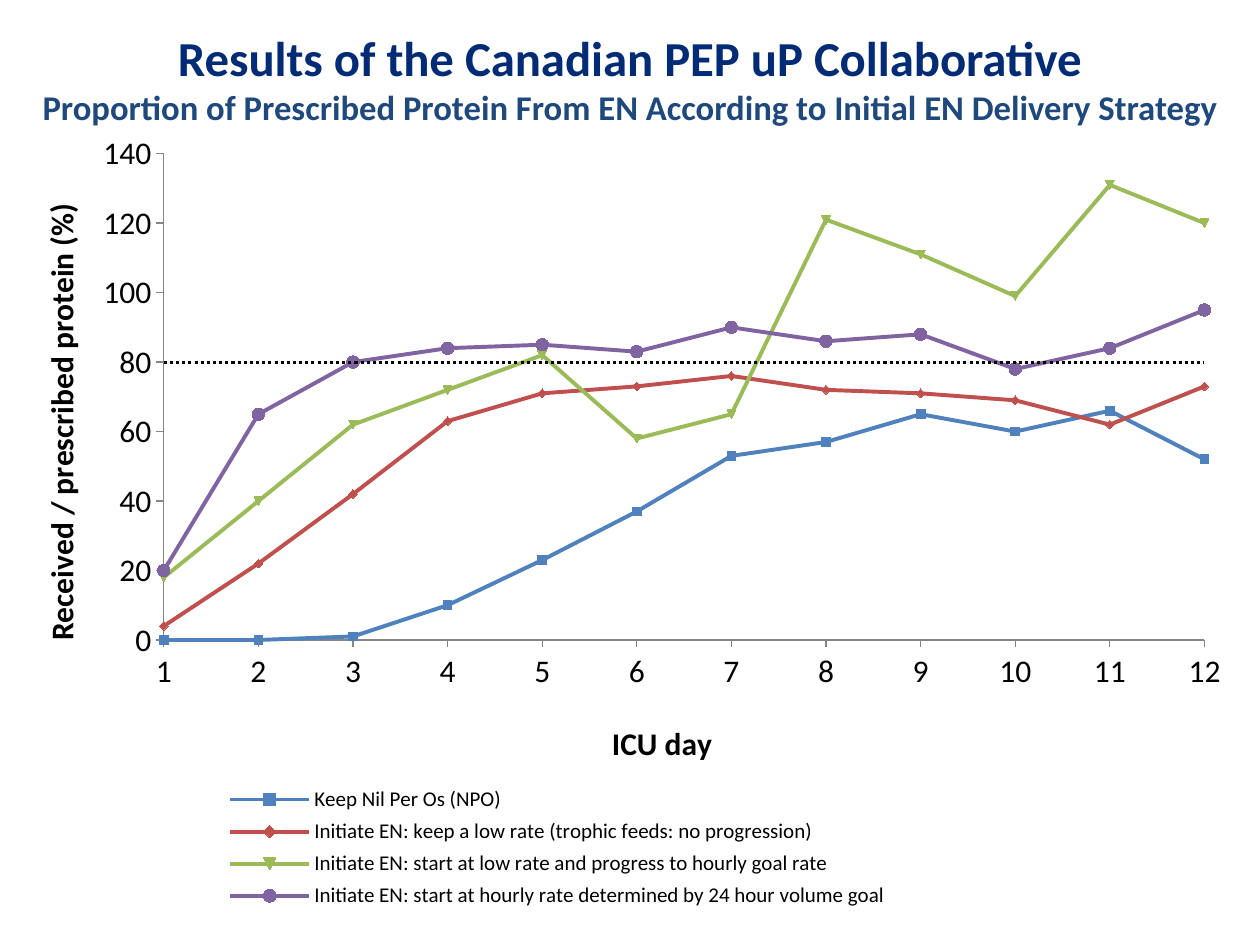
import pptx
import pptx.chart.data
import pptx.dml.color
import pptx.enum.chart
import pptx.enum.dml
import pptx.enum.text
import pptx.oxml
import pptx.oxml.ns
import pptx.util

RGB = pptx.dml.color.RGBColor
Pt = pptx.util.Pt
Inches = pptx.util.Inches
qn = pptx.oxml.ns.qn

NAVY = RGB(0x01, 0x2B, 0x74)
SLATE = RGB(0x1F, 0x49, 0x7D)
BLACK = RGB(0, 0, 0)
GREY = RGB(0x86, 0x86, 0x86)
BLUE = RGB(0x4F, 0x81, 0xBD)
RED = RGB(0xC0, 0x50, 0x4D)
GREEN = RGB(0x9B, 0xBB, 0x59)
PURPLE = RGB(0x80, 0x64, 0xA2)

FONT = "Calibri"
WIDTH, HEIGHT = Inches(10), Inches(7.5)
CHART_W, CHART_H = 9.67, 6.33
DAYS = 12
TARGET = 80

STRATEGIES = [
    ("Keep Nil Per Os (NPO)", BLUE,
     [0, 0, 1, 10, 23, 37, 53, 57, 65, 60, 66, 52]),
    ("Initiate EN: keep a low rate (trophic feeds: no progression)", RED,
     [4, 22, 42, 63, 71, 73, 76, 72, 71, 69, 62, 73]),
    ("Initiate EN: start at low rate and progress to hourly goal rate", GREEN,
     [18, 40, 62, 72, 82, 58, 65, 121, 111, 99, 131, 120]),
    ("Initiate EN: start at hourly rate determined by 24 hour volume goal", PURPLE,
     [20, 65, 80, 84, 85, 83, 90, 86, 88, 78, 84, 95]),
]


def style_font(font, size, color, bold=False):
    font.name = FONT
    font.size = Pt(size)
    font.bold = bold
    font.color.rgb = color


def add_span(para, text, size, color, bold=False):
    span = para.add_run()
    span.text = text
    style_font(span.font, size, color, bold)


def add_heading(page):
    box = page.shapes.add_textbox(0, Inches(0.42), WIDTH, Inches(0.83))
    frame = box.text_frame
    frame.word_wrap = True
    frame.vertical_anchor = pptx.enum.text.MSO_ANCHOR.MIDDLE
    frame.margin_top, frame.margin_bottom = 0, Inches(0.35)
    title, subtitle = frame.paragraphs[0], frame.add_paragraph()
    title.line_spacing = 0.8
    add_span(title, "Results of the Canadian PEP uP Collaborative", 27.9, NAVY, True)
    add_span(subtitle, "Proportion of Prescribed Protein From EN "
             "According to Initial EN Delivery Strategy", 19.8, SLATE, True)
    for para in frame.paragraphs:
        para.alignment = pptx.enum.text.PP_ALIGN.CENTER


def set_layout(element, after, x, y, w=None, h=None, inner=False):
    """Place a chart part by shares of the chart's size."""
    for old in element.findall(qn("c:layout")):
        element.remove(old)
    parts = [("layoutTarget", "inner")] if inner else []
    parts += [("xMode", "edge"), ("yMode", "edge"), ("x", x), ("y", y)]
    if w is not None:
        parts += [("w", w), ("h", h)]
    body = "".join(f'<c:{tag} val="{value}"/>' for tag, value in parts)
    layout = pptx.oxml.parse_xml(
        f'<c:layout {pptx.oxml.ns.nsdecls("c")}>'
        f'<c:manualLayout>{body}</c:manualLayout></c:layout>')
    before = element.find(qn(after)) if after else None
    if before is None:
        element.insert(0, layout)
    else:
        before.addnext(layout)


def style_axis(axis, title, x, y):
    axis.has_major_gridlines = False
    axis.major_tick_mark = pptx.enum.chart.XL_TICK_MARK.OUTSIDE
    axis.minor_tick_mark = pptx.enum.chart.XL_TICK_MARK.NONE
    axis.format.line.color.rgb = GREY
    axis.format.line.width = Pt(0.75)
    style_font(axis.tick_labels.font, 18, BLACK)
    para = axis.axis_title.text_frame.paragraphs[0]
    add_span(para, title, 18, BLACK, True)
    set_layout(axis.axis_title._element, "c:tx", x, y)


def cross_on_first_day(value_axis):
    """Let the first and last day sit on the plot's edges."""
    element = value_axis._element
    for old in element.findall(qn("c:crossBetween")):
        element.remove(old)
    cross = pptx.oxml.parse_xml(
        f'<c:crossBetween {pptx.oxml.ns.nsdecls("c")} val="midCat"/>')
    element.find(qn("c:majorUnit")).addprevious(cross)


def style_line(series, color, width):
    series.smooth = False
    series.format.line.color.rgb = color
    series.format.line.width = Pt(width)


def fill_marker(series, color):
    marker = series.marker.format
    marker.fill.solid()
    marker.fill.fore_color.rgb = color
    marker.line.color.rgb = color


def style_legend(chart, hidden_index):
    chart.has_legend = True
    legend = chart.legend
    legend.position = pptx.enum.chart.XL_LEGEND_POSITION.BOTTOM
    legend.include_in_layout = False
    style_font(legend.font, 12, BLACK)
    entry = pptx.oxml.parse_xml(
        f'<c:legendEntry {pptx.oxml.ns.nsdecls("c")}>'
        f'<c:idx val="{hidden_index}"/><c:delete val="1"/></c:legendEntry>')
    legend._element.find(qn("c:legendPos")).addnext(entry)
    set_layout(legend._element, "c:legendEntry", 0.16, 0.82, 0.56, 0.17)


def add_protein_chart(page):
    data = pptx.chart.data.CategoryChartData()
    data.categories = [str(day) for day in range(1, DAYS + 1)]
    for name, _, values in STRATEGIES:
        data.add_series(name, values)
    data.add_series("Series 5", [TARGET] * DAYS)
    chart = page.shapes.add_chart(
        pptx.enum.chart.XL_CHART_TYPE.LINE_MARKERS,
        Inches(0.17), Inches(1), Inches(CHART_W), Inches(CHART_H), data).chart
    chart.has_title = False
    style_font(chart.font, 18, BLACK)

    # Strategy lines, then the dotted target line
    plot = chart.plots[0]
    plot.vary_by_categories = False
    *lines, target = plot.series
    for series, (_, color, _) in zip(lines, STRATEGIES):
        style_line(series, color, 2.25)
        fill_marker(series, color)
    lines[-1].marker.style = pptx.enum.chart.XL_MARKER_STYLE.CIRCLE
    lines[-1].marker.size = 7
    style_line(target, BLACK, 1.75)
    target.format.line.dash_style = pptx.enum.dml.MSO_LINE.ROUND_DOT
    target.marker.style = pptx.enum.chart.XL_MARKER_STYLE.NONE

    # Axes
    style_axis(chart.category_axis, "ICU day", 0.48, 0.74)
    value_axis = chart.value_axis
    style_axis(value_axis, "Received / prescribed protein (%)", 0.01, 0.09)
    value_axis.minimum_scale, value_axis.maximum_scale = 0, 140
    value_axis.major_unit = 20
    cross_on_first_day(value_axis)

    # Legend and plot area
    style_legend(chart, len(STRATEGIES))
    plot_area = chart._chartSpace.chart.plotArea
    set_layout(plot_area, None, 1.13 / CHART_W, 0.22 / CHART_H,
               8.26 / CHART_W, 3.86 / CHART_H, inner=True)


def main():
    deck = pptx.Presentation()
    deck.slide_width, deck.slide_height = WIDTH, HEIGHT
    page = deck.slides.add_slide(deck.slide_layouts[6])
    add_heading(page)
    add_protein_chart(page)
    deck.save("out.pptx")


if __name__ == "__main__":
    main()
